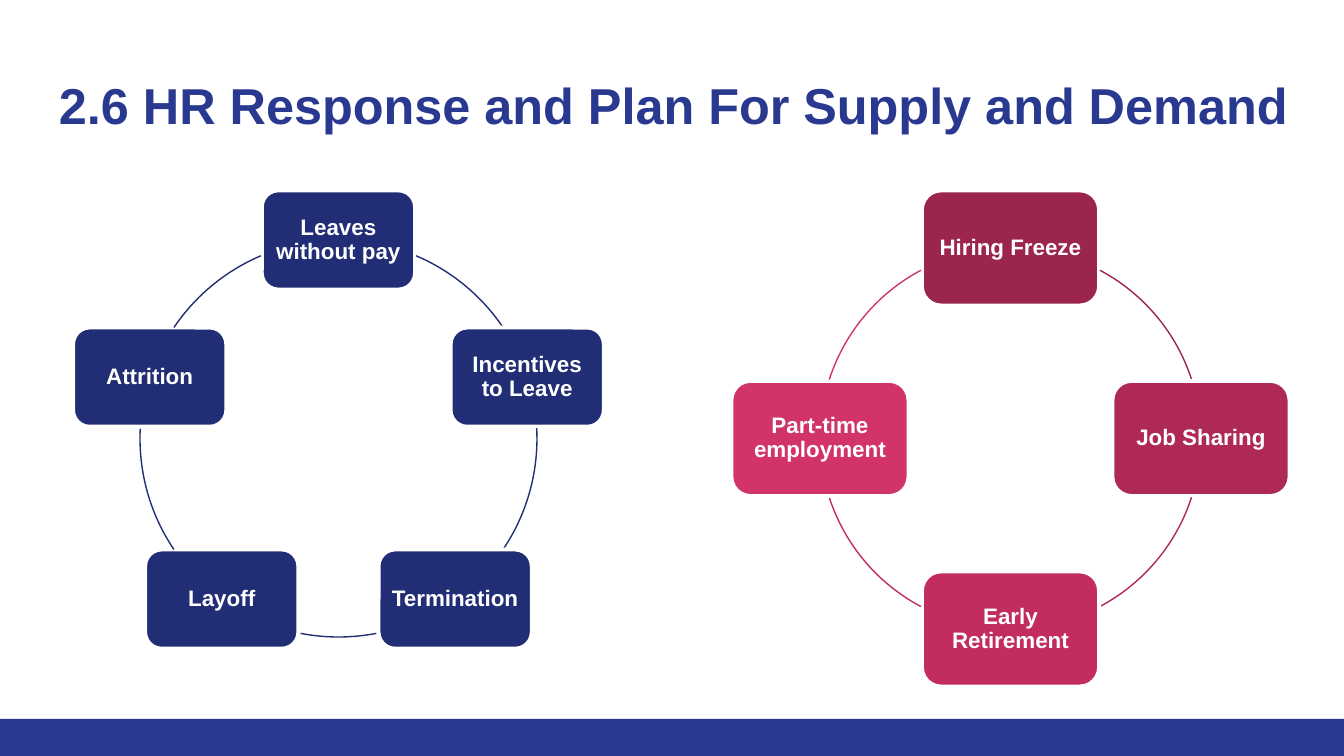
import dataclasses
import math

import pptx
import pptx.dml.color
import pptx.enum.shapes
import pptx.enum.text
import pptx.util

EMU_PER_PX = 914400 / 134.4
SHAPES = pptx.enum.shapes.MSO_SHAPE
ANCHOR = pptx.enum.text.MSO_ANCHOR
ALIGN = pptx.enum.text.PP_ALIGN


@dataclasses.dataclass(frozen=True)
class Theme:
    """Colours, font and type sizes of the slide."""
    font: str = "Arial"
    brand: str = "2A3990"
    navy: str = "212D74"
    white: str = "FFFFFF"
    roses: tuple = ("9C254D", "AF2956", "C22C5F", "D23369")
    title_size: int = 27
    node_size: int = 12
    node_border: float = 2
    arc_width: float = 0.75


THEME = Theme()

SUPPLY_STEPS = [
    ("Leaves without pay", THEME.navy, (293, 326)),
    ("Incentives to Leave", THEME.navy, (357, 34)),
    ("Termination", THEME.navy, (79, 101)),
    ("Layoff", THEME.navy, (146, 183)),
    ("Attrition", THEME.navy, (214, 247)),
]
DEMAND_STEPS = list(zip(
    ("Hiring Freeze", "Job Sharing", "Early Retirement", "Part-time employment"),
    THEME.roses,
    ((298, 342), (18, 62), (118, 162), (198, 242)),
))


def px(length):
    """Turn pixels into EMU."""
    return pptx.util.Emu(round(length * EMU_PER_PX))


def rgb(colour):
    """Turn a hex string into a colour."""
    return pptx.dml.color.RGBColor.from_string(colour)


def add_preset(slide, preset, box, fill=None, line=None, line_width=1):
    """Add a flat preset shape with the given fill and line."""
    shape = slide.shapes.add_shape(preset, *map(px, box))
    shape.shadow.inherit = False
    if fill:
        shape.fill.solid()
        shape.fill.fore_color.rgb = rgb(fill)
    else:
        shape.fill.background()
    if line:
        shape.line.color.rgb = rgb(line)
        shape.line.width = pptx.util.Pt(line_width)
    else:
        shape.line.fill.background()
    return shape


def write(shape, text, size, colour, align, anchor, inset):
    """Put bold text into a shape."""
    frame = shape.text_frame
    frame.text = text
    frame.word_wrap = True
    frame.auto_size = pptx.enum.text.MSO_AUTO_SIZE.NONE
    frame.vertical_anchor = anchor
    frame.margin_left = frame.margin_right = px(inset)
    frame.margin_top = frame.margin_bottom = px(inset)
    paragraph = frame.paragraphs[0]
    paragraph.alignment = align
    font = paragraph.runs[0].font
    font.name = THEME.font
    font.size = pptx.util.Pt(size)
    font.bold = True
    font.color.rgb = rgb(colour)
    return paragraph


def place_title(slide, box, text):
    """Move the title placeholder to its box and fill it."""
    title = slide.shapes.title
    title.left, title.top, title.width, title.height = map(px, box)
    write(title, text, THEME.title_size, THEME.brand, ALIGN.LEFT, ANCHOR.TOP, 13)


def draw_cycle(slide, ring, node_size, steps):
    """Spread the steps clockwise round a ring, joined by arcs."""
    left, top, diameter = ring
    radius = diameter / 2
    node_width, node_height = node_size
    for index, (label, colour, span) in enumerate(steps):
        angle = math.tau * index / len(steps)
        node_left = left + radius + radius * math.sin(angle) - node_width / 2
        node_top = top + radius - radius * math.cos(angle) - node_height / 2
        node = add_preset(slide, SHAPES.ROUNDED_RECTANGLE,
                          (node_left, node_top, node_width, node_height),
                          colour, THEME.white, THEME.node_border)
        paragraph = write(node, label, THEME.node_size, THEME.white,
                          ALIGN.CENTER, ANCHOR.MIDDLE, 6)
        paragraph.line_spacing = 0.9
        arc = add_preset(slide, SHAPES.ARC, (left, top, diameter, diameter),
                         line=colour, line_width=THEME.arc_width)
        for end, degrees in enumerate(span):
            arc.adjustments[end] = degrees * 0.6


def main():
    """Build the slide and save it."""
    deck = pptx.Presentation()
    deck.slide_width, deck.slide_height = px(1344), px(756)
    slide = deck.slides.add_slide(deck.slide_layouts[5])
    add_preset(slide, SHAPES.RECTANGLE, (0, 719, 1344, 37), THEME.brand)
    place_title(slide, (46, 61, 1273, 89),
                "2.6 HR Response and Plan For Supply and Demand")
    draw_cycle(slide, (140, 240, 397), (153, 99), SUPPLY_STEPS)
    draw_cycle(slide, (820, 248, 381), (177, 115), DEMAND_STEPS)
    deck.save("out.pptx")


if __name__ == "__main__":
    main()
